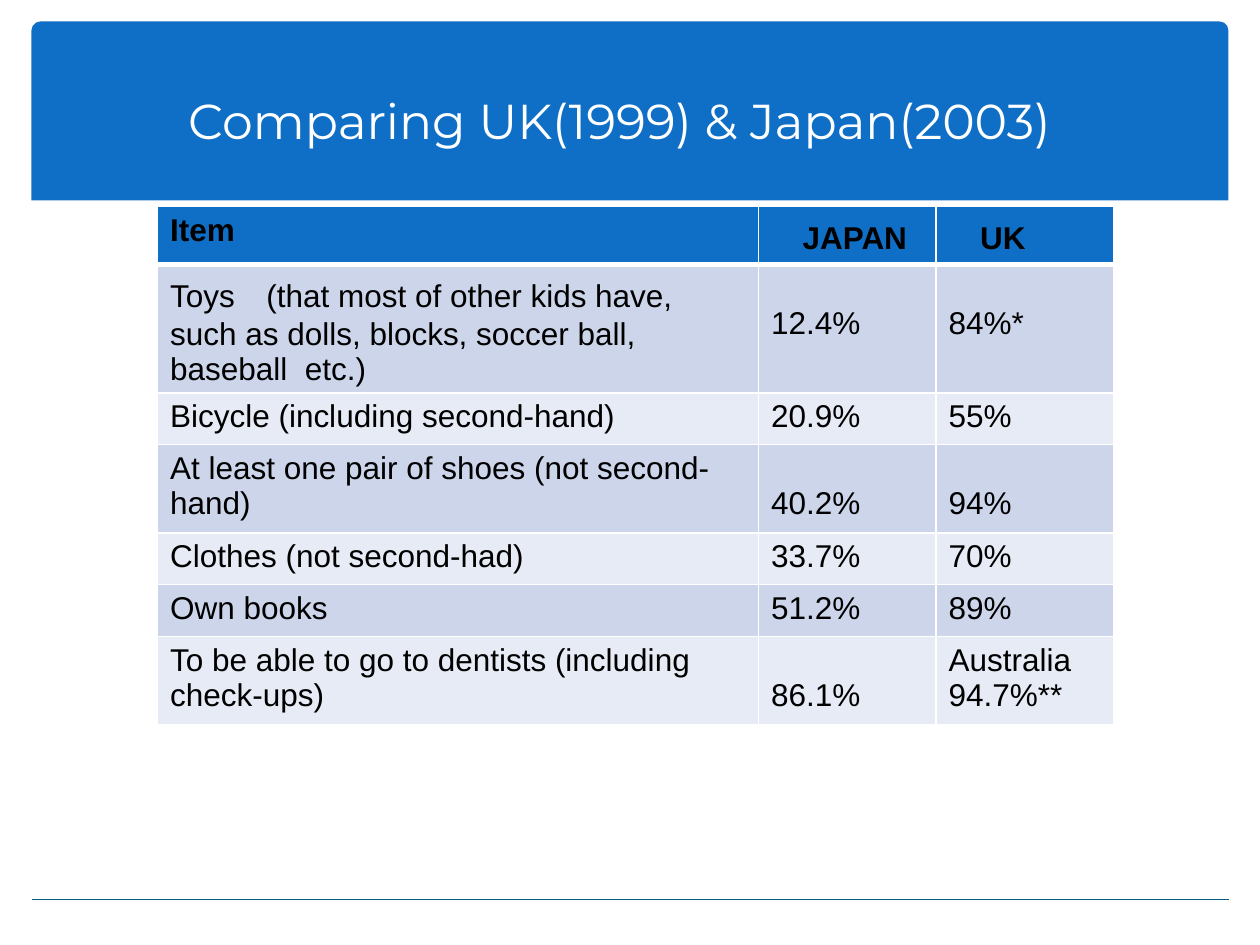
from lxml import etree
from pptx import Presentation
from pptx.dml.color import RGBColor
from pptx.enum.shapes import MSO_CONNECTOR, MSO_SHAPE
from pptx.enum.text import MSO_ANCHOR, PP_ALIGN
from pptx.oxml.ns import qn
from pptx.util import Inches, Pt

ROUND_TOP = MSO_SHAPE.ROUND_2_SAME_RECTANGLE
STRAIGHT = MSO_CONNECTOR.STRAIGHT
MIDDLE = MSO_ANCHOR.MIDDLE
CENTER = PP_ALIGN.CENTER

COLORS = {"blue": "0F6FC6", "teal": "04617B", "white": "FFFFFF",
          "black": "000000", "odd": "CCD5EA", "even": "E7EBF5"}
COLS = [4.77, 1.41, 1.41]
HEIGHTS = [0.46, 1.02, 0.41, 0.66, 0.41, 0.41, 0.66]
ROWS = [
    ["Item", "　JAPAN", "　UK"],
    ["Toys　(that most of other kids have, such as dolls, blocks, "
     "soccer ball, baseball  etc.)", "12.4%", "84%*"],
    ["Bicycle (including second-hand)", "20.9%", "55%"],
    ["At least one pair of shoes (not second-hand)", "40.2%", "94%"],
    ["Clothes (not second-had)", "33.7%", "70%"],
    ["Own books", "51.2%", "89%"],
    ["To be able to go to dentists (including check-ups)", "86.1%",
     "Australia\n94.7%**"],
]
LOWERED = {(1, 1), (1, 2), (3, 1), (3, 2), (6, 1)}  # values on the second line


def rgb(name):
    return RGBColor.from_string(COLORS[name])


def style(par, font, size, color, bold=False):
    for run in par.runs:
        run.font.name = font
        run.font.size = Pt(size)
        run.font.bold = bold
        run.font.color.rgb = rgb(color)


def add_band(slide, left, top, width, height):
    band = slide.shapes.add_shape(ROUND_TOP, Inches(left), Inches(top),
                                  Inches(width), Inches(height))
    band.adjustments[0] = 0.05
    band.adjustments[1] = 0
    band.shadow.inherit = False
    band.fill.solid()
    band.fill.fore_color.rgb = rgb("blue")
    band.line.fill.background()

    box = slide.shapes.add_textbox(Inches(left + 0.37), Inches(top + 0.41),
                                   Inches(8.59), Inches(0.74))
    frame = box.text_frame
    frame.word_wrap = True
    frame.vertical_anchor = MIDDLE
    frame.text = "Comparing UK(1999) & Japan(2003)"
    frame.paragraphs[0].alignment = CENTER
    style(frame.paragraphs[0], "Montserrat", 28, "white")


def add_rule(slide, left, top, width):
    rule = slide.shapes.add_connector(STRAIGHT, Inches(left), Inches(top),
                                      Inches(left + width), Inches(top))
    rule.line.color.rgb = rgb("teal")
    rule.line.width = Pt(1)
    etree.SubElement(rule._element.spPr, qn("a:effectLst"))


def set_edge(cell, side, width):
    props = cell._tc.get_or_add_tcPr()
    edge = etree.SubElement(props, qn("a:ln" + side), w=str(Pt(width)))
    fill = etree.SubElement(edge, qn("a:solidFill"))
    etree.SubElement(fill, qn("a:srgbClr"), val=COLORS["white"])


def fill_cell(cell, text, row, lowered):
    head = row == 0
    for side in "LRTB":
        thick = (head and side == "B") or (row == 1 and side == "T")
        set_edge(cell, side, 3 if thick else 1)
    cell.fill.solid()
    shade = "blue" if head else "odd" if row % 2 else "even"
    cell.fill.fore_color.rgb = rgb(shade)
    if lowered:
        cell.margin_top = Inches(0.33)
    cell.text_frame.text = text
    for par in cell.text_frame.paragraphs:
        style(par, "Arial", 18, "black", bold=head)


def add_items(slide, left, top):
    frame = slide.shapes.add_table(len(ROWS), len(COLS), Inches(left),
                                   Inches(top), Inches(sum(COLS)),
                                   Inches(sum(HEIGHTS)))
    table = frame.table
    for col, width in zip(table.columns, COLS):
        col.width = Inches(width)
    for r, texts in enumerate(ROWS):
        table.rows[r].height = Inches(HEIGHTS[r])
        for c, text in enumerate(texts):
            fill_cell(table.cell(r, c), text, r, (r, c) in LOWERED)


def main():
    deck = Presentation()
    deck.slide_width, deck.slide_height = Inches(10), Inches(7.5)
    slide = deck.slides.add_slide(deck.slide_layouts[6])
    add_band(slide, 0.25, 0.17, 9.5, 1.42)
    add_rule(slide, 0.25, 7.14, 9.5)
    add_items(slide, 1.25, 1.64)
    deck.save("out.pptx")


if __name__ == "__main__":
    main()
